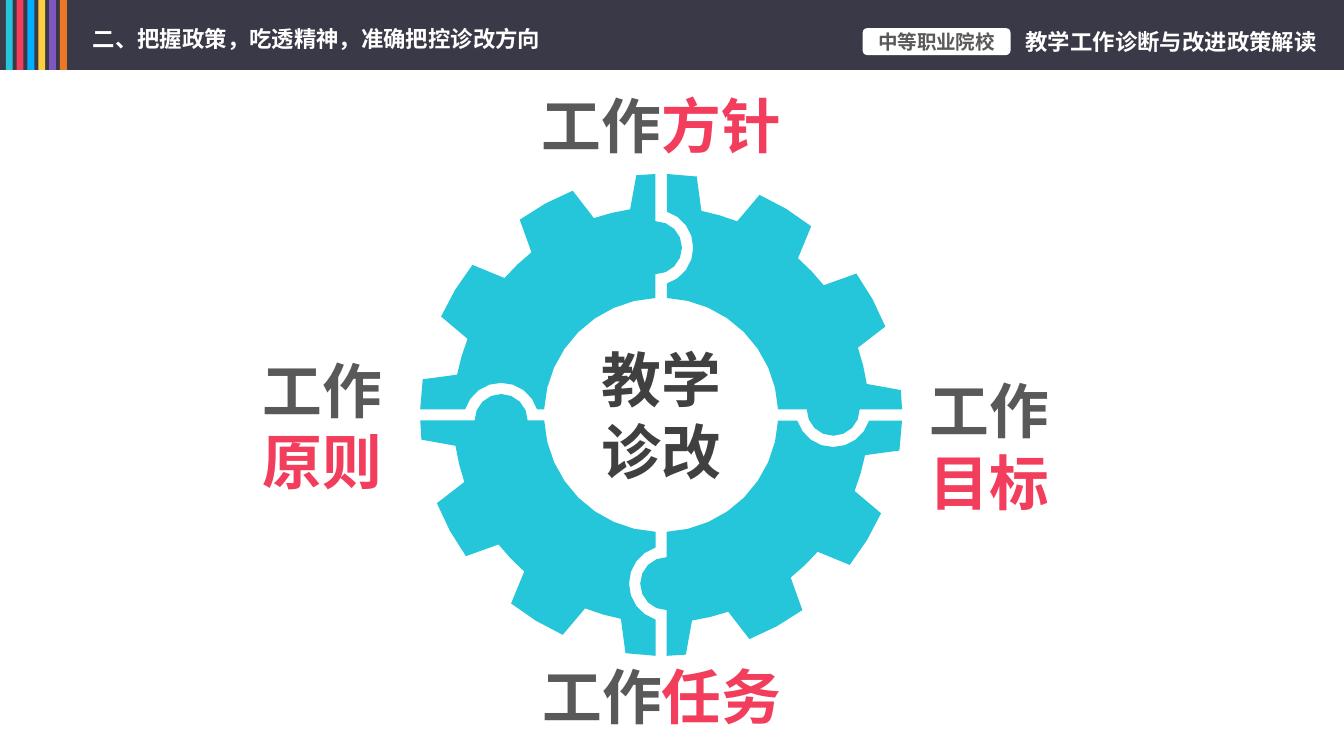
from math import acos, asin, ceil, cos, degrees, radians, sin

from lxml import etree
from pptx import Presentation
from pptx.dml.color import RGBColor
from pptx.enum.shapes import MSO_SHAPE
from pptx.enum.text import MSO_ANCHOR, MSO_AUTO_SIZE, PP_ALIGN
from pptx.oxml.ns import qn
from pptx.util import Pt

RECT, ROUND = MSO_SHAPE.RECTANGLE, MSO_SHAPE.ROUNDED_RECTANGLE
LEFT, MID = PP_ALIGN.LEFT, PP_ALIGN.CENTER
CENTER = MSO_ANCHOR.MIDDLE
TOP = MSO_ANCHOR.TOP
FIXED = MSO_AUTO_SIZE.NONE

# Content: each text is a list of paragraphs, each a list of (words, colour)
TITLE = [[("二、把握政策，吃透精神，准确把控诊改方向", "white")]]
BADGE = [[("中等职业院校", "gray")]]
TOPIC = [[("教学工作诊断与改进政策解读", "white")]]
LABELS = [
    # left, top, width, height, paragraphs
    (314.6, 180, 79.2, 85, [[("教学", "ink")], [("诊改", "ink")]]),
    (269.3, 43.9, 170, 46, [[("工作", "gray"), ("方针", "pink")]]),
    (490.3, 196.6, 79.2, 85, [[("工作", "gray")], [("目标", "pink")]]),
    (280.8, 350, 147.6, 46, [[("工作", "gray"), ("任务", "pink")]]),
    (133.2, 185.8, 79.2, 85, [[("工作", "gray")], [("原则", "pink")]]),
]
STRIPES = ["cyan", "pink", "blue", "yellow", "purple", "orange"]

THEME = {
    "font": "Noto Sans CJK SC",
    "size": {"label": 32, "head": 12, "badge": 10.5},
    "color": {
        "bar": "3A3947", "white": "FFFFFF", "gray": "595959", "ink": "404040",
        "cyan": "26C6DA", "pink": "F23E5C", "blue": "00B0FF",
        "yellow": "FFCD40", "purple": "7E57C1", "orange": "EC7825",
    },
}

# Gear, in points and degrees clockwise from the top
HUB_X, HUB_Y = 354.2, 222.3
TIP, ROOT, HOLE = 129.1, 111.4, 62.7
TEETH, TURN = 12, 1.3
TIP_HALF, ROOT_HALF = 7.2, 9.85
GAP = 3
KNOB, SOCKET = 14.2, 20.2
JOINTS = [89.6, 92.2, 90.4, 85.7]  # joint radius: top, right, bottom, left
SLACK = 0.3  # largest distance between a chord and its arc


def color(name):
    return RGBColor.from_string(THEME["color"][name])


def paint(shape, name):
    shape.shadow.inherit = False
    shape.fill.solid()
    shape.fill.fore_color.rgb = color(name)
    shape.line.fill.background()


def write(shape, paras, size, align=MID, anchor=CENTER, pad=(0, 0), wrap=False):
    frame = shape.text_frame
    frame.word_wrap = wrap
    frame.auto_size = FIXED
    frame.vertical_anchor = anchor
    frame.margin_left = frame.margin_right = Pt(pad[0])
    frame.margin_top = frame.margin_bottom = Pt(pad[1])
    for i, parts in enumerate(paras):
        para = frame.add_paragraph() if i else frame.paragraphs[0]
        para.alignment = align
        for words, name in parts:
            run = para.add_run()
            run.text = words
            font = run.font
            font.name = THEME["font"]
            font.size = Pt(THEME["size"][size])
            font.bold = True
            font.color.rgb = color(name)
            # East Asian typeface
            east = etree.SubElement(run._r.get_or_add_rPr(), qn("a:ea"))
            east.set("typeface", THEME["font"])


def arc(x, y, r, start, end):
    step = 2 * degrees(acos(1 - SLACK / r))
    count = ceil(abs(end - start) / step)
    turns = [radians(start + (end - start) * i / count) for i in range(count + 1)]
    return [(x + r * sin(t), y + r * cos(t)) for t in turns]


def rim():
    """Toothed edge of one quarter, from its first gap to its last."""
    step = 360 / TEETH
    edge = degrees(asin(GAP / TIP))
    points = []
    for i in range(TEETH // 4 + 1):
        mid = TURN + i * step
        low = max(edge, mid - TIP_HALF)
        high = min(90 - edge, mid + TIP_HALF)
        points += arc(0, 0, TIP, low, high)
        if i < TEETH // 4:
            points += arc(0, 0, ROOT, mid + ROOT_HALF, mid + step - ROOT_HALF)
    return points


def piece(first, last):
    """Upper right quarter: socket on its first gap, knob on its last."""
    mouth = degrees(asin(2 * GAP / SOCKET))
    slant = degrees(asin(GAP / HOLE))
    return (
        arc(-GAP, first, SOCKET, 180 - mouth, mouth)
        + rim()
        + arc(last, GAP, KNOB, 90, 270)
        + arc(0, 0, HOLE, 90 - slant, slant)
    )


deck = Presentation()
deck.slide_width, deck.slide_height = Pt(720), Pt(405)
slide = deck.slides.add_slide(deck.slide_layouts[5])
shapes = slide.shapes


def block(kind, x, y, w, h, name):
    shape = shapes.add_shape(kind, Pt(x), Pt(y), Pt(w), Pt(h))
    paint(shape, name)
    return shape


# Header bar and stripes
block(RECT, 0, 0, 720, 37.5, "bar")
for i, name in enumerate(STRIPES):
    block(RECT, 3.1 + 5.8 * i, 0, 3.7, 37.5, name)

# Title, raised above the bar
title = shapes.title
title.left, title.top, title.width, title.height = Pt(42.5), Pt(10), Pt(257), Pt(21.6)
title.element.getparent().append(title.element)
write(title, TITLE, "head", align=LEFT, pad=(7.2, 3.6))

# Badge and topic
badge = block(ROUND, 462.2, 15.1, 79.2, 14.4, "white")
write(badge, BADGE, "badge")
topic = shapes.add_textbox(Pt(548.6), Pt(15.1), Pt(157.7), Pt(14.4))
write(topic, TOPIC, "head")

# Gear quarters, clockwise from the upper right
for i, first in enumerate(JOINTS):
    points = piece(first, JOINTS[(i + 1) % 4])
    for _ in range(i):
        points = [(y, -x) for x, y in points]
    spots = [(Pt(HUB_X + x), Pt(HUB_Y - y)) for x, y in points]
    path = shapes.build_freeform(*spots[0])
    path.add_line_segments(spots[1:], close=True)
    paint(path.convert_to_shape(), "cyan")

# Labels
for x, y, w, h, paras in LABELS:
    box = shapes.add_textbox(Pt(x), Pt(y), Pt(w), Pt(h))
    write(box, paras, "label", anchor=TOP, pad=(7.2, 3.6), wrap=w > 100)

deck.save("out.pptx")
